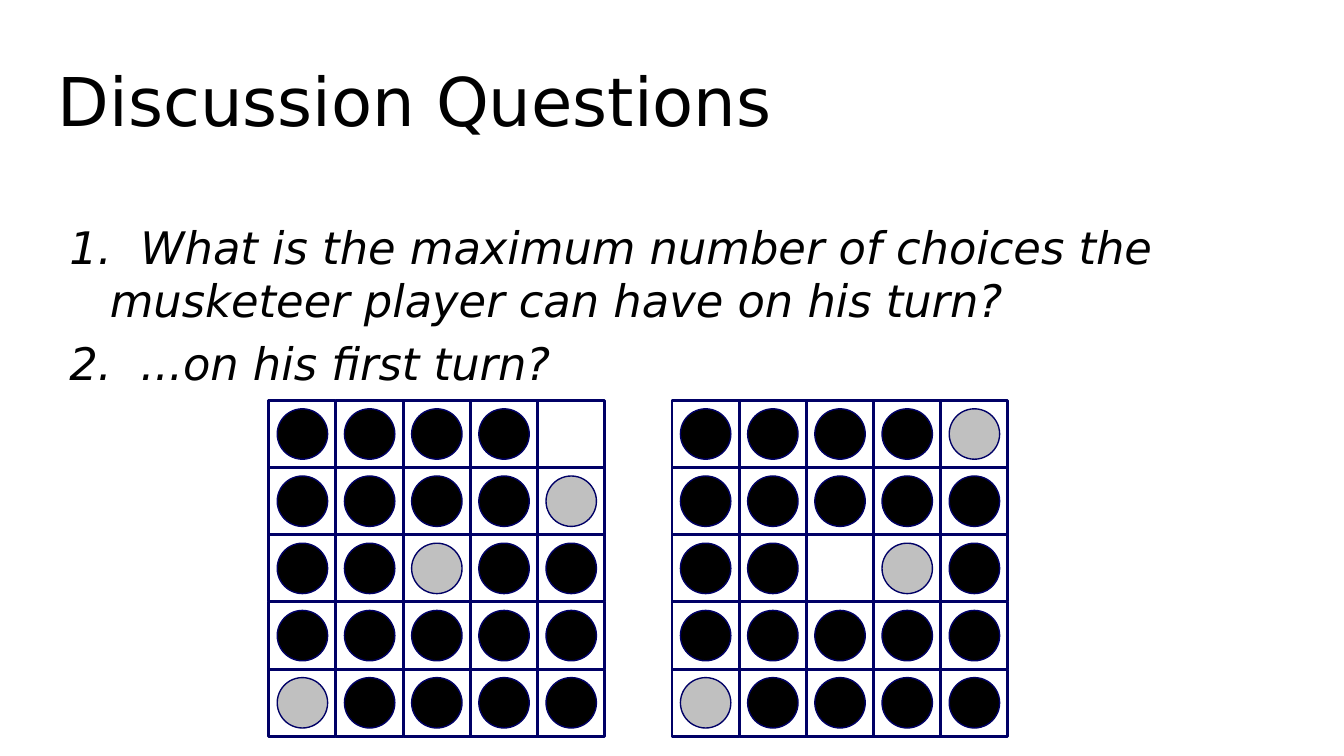
"""Build a slide with two discussion questions and two game boards."""
import pptx
import pptx.dml.color
import pptx.enum.shapes
import pptx.util

TITLE = ["Discussion Questions"]
ASKS = [
    "1.  What is the maximum number of choices the musketeer player can have on his turn?",
    "2.  ...on his first turn?",
]
BOARDS = [
    (192, ["XXXX.", "XXXXO", "XXOXX", "XXXXX", "OXXXX"]),
    (480, ["XXXXO", "XXXXX", "XX.OX", "XXXXX", "OXXXX"]),
]
TOP, CELL, DISC = 286, 48, 36
FONT = "DejaVu Sans"
BLACK = pptx.dml.color.RGBColor(0x00, 0x00, 0x00)
GRAY = pptx.dml.color.RGBColor(0xC0, 0xC0, 0xC0)
NAVY = pptx.dml.color.RGBColor(0x00, 0x00, 0x66)
FILLS = {"X": BLACK, "O": GRAY}
KIND = pptx.enum.shapes.MSO_SHAPE


def px(num):
    """Turn pixels into EMU."""
    return pptx.util.Emu(num * 9525)


def add_text(slide, lines, box, size, italic=False, left=0, indent=0, gap=0):
    """Add a text box with one paragraph for each line."""
    frame = slide.shapes.add_textbox(*map(px, box)).text_frame
    frame.word_wrap = True
    for i, line in enumerate(lines):
        para = frame.add_paragraph() if i else frame.paragraphs[0]
        props = para._p.get_or_add_pPr()
        props.set("marL", str(px(left)))
        props.set("indent", str(px(indent)))
        para.space_before = pptx.util.Pt(gap if i else 0)
        run = para.add_run()
        run.text = line
        run.font.name = FONT
        run.font.size = pptx.util.Pt(size)
        run.font.italic = italic
        run.font.color.rgb = BLACK


def add_mark(group, kind, x, y, size, width, fill=None):
    """Add a square or a disc to a board."""
    mark = group.shapes.add_shape(kind, px(x), px(y), px(size), px(size))
    mark.shadow.inherit = False
    mark.line.color.rgb = NAVY
    mark.line.width = pptx.util.Pt(width)
    if fill is None:
        mark.fill.background()
    else:
        mark.fill.solid()
        mark.fill.fore_color.rgb = fill


def add_board(slide, left, rows):
    """Add a grid of cells with its discs."""
    group = slide.shapes.add_group_shape()
    spots = [(left + c * CELL, TOP + r * CELL, key)
             for r, row in enumerate(rows) for c, key in enumerate(row)]
    for x, y, key in spots:
        add_mark(group, KIND.RECTANGLE, x, y, CELL, 1.5)
    pad = (CELL - DISC) // 2
    for x, y, key in spots:
        if key in FILLS:
            add_mark(group, KIND.OVAL, x + pad, y + pad, DISC, 0.75, FILLS[key])


def main():
    """Build and save the slide."""
    deck = pptx.Presentation()
    deck.slide_width, deck.slide_height = px(960), px(540)
    slide = deck.slides.add_slide(deck.slide_layouts[6])
    add_text(slide, TITLE, (32, 38, 872, 114), 36)
    add_text(slide, ASKS, (33, 152, 927, 288), 24, italic=True,
             left=36, indent=-29, gap=4.8)
    for left, rows in BOARDS:
        add_board(slide, left, rows)
    deck.save("out.pptx")


if __name__ == "__main__":
    main()
